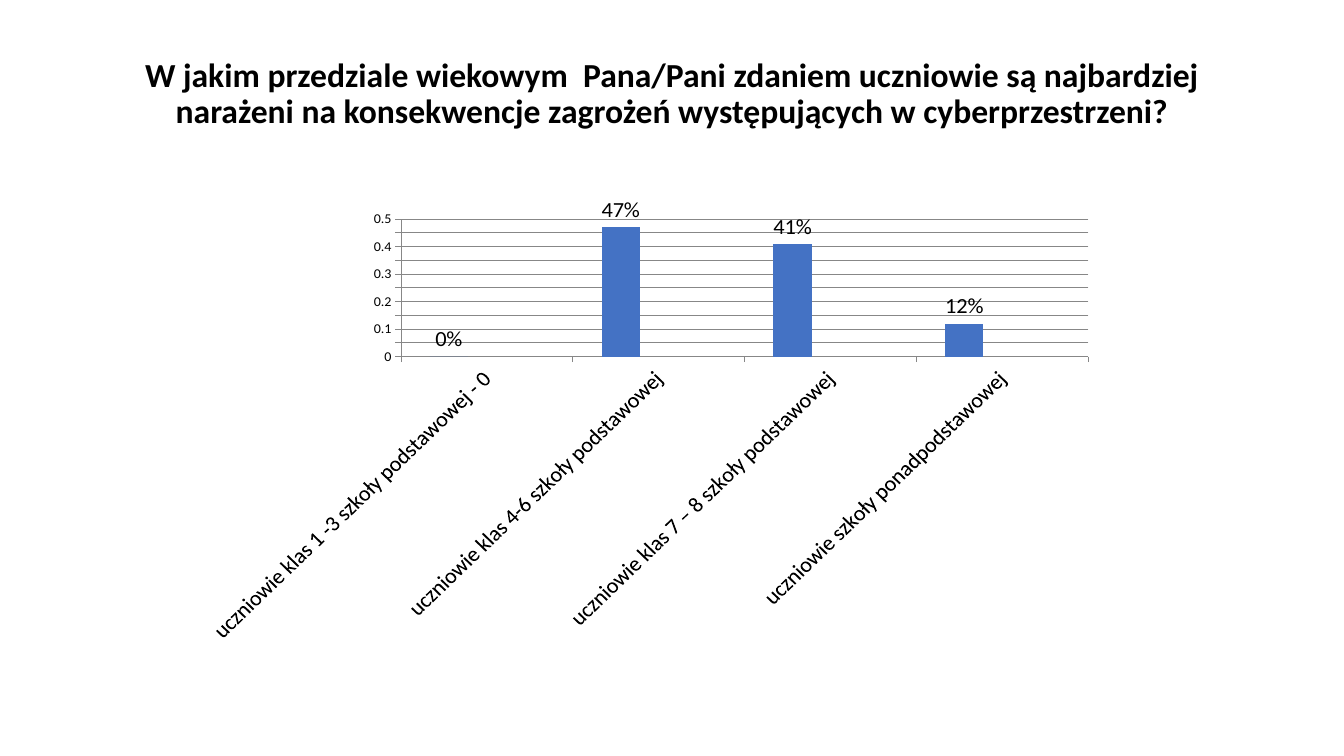
from pptx import Presentation
from pptx.chart.data import CategoryChartData
from pptx.dml.color import RGBColor
from pptx.enum.chart import XL_CHART_TYPE, XL_LABEL_POSITION, XL_TICK_MARK
from pptx.enum.text import MSO_ANCHOR, PP_ALIGN
from pptx.util import Pt

PX = 9525  # 96 px to the inch
FONT = "Calibri"
BLACK = RGBColor(0x00, 0x00, 0x00)
GREY = RGBColor(0x87, 0x87, 0x87)
SERIES_COLORS = [
    RGBColor(0x44, 0x72, 0xC4),
    RGBColor(0xED, 0x7D, 0x31),
    RGBColor(0xA5, 0xA5, 0xA5),
]

QUESTION = (
    "W jakim przedziale wiekowym  Pana/Pani zdaniem uczniowie są najbardziej "
    "narażeni na konsekwencje zagrożeń występujących w cyberprzestrzeni?"
)
ANSWERS = {
    "uczniowie klas 1 -3 szkoły podstawowej - 0": 0,
    "uczniowie klas 4-6 szkoły podstawowej": 0.47,
    "uczniowie klas 7 – 8 szkoły podstawowej": 0.41,
    "uczniowie szkoły ponadpodstawowej": 0.12,
}


def scale(box):
    return [length * PX for length in box]


def style_font(font, size, bold=False):
    font.name = FONT
    font.size = Pt(size)
    font.bold = bold
    font.color.rgb = BLACK


def add_question(page, box):
    frame = page.shapes.add_textbox(*scale(box)).text_frame
    frame.word_wrap = True
    frame.vertical_anchor = MSO_ANCHOR.MIDDLE
    frame.margin_bottom = 40 * PX  # lifts the text above the middle
    frame.text = QUESTION
    para = frame.paragraphs[0]
    para.alignment = PP_ALIGN.CENTER
    para.line_spacing = 0.9
    style_font(para.runs[0].font, 24, bold=True)


def style_axis(axis, size):
    axis.major_tick_mark = XL_TICK_MARK.OUTSIDE
    axis.minor_tick_mark = XL_TICK_MARK.NONE
    axis.format.line.color.rgb = GREY
    style_font(axis.tick_labels.font, size)


def add_answer_chart(page, box):
    # Data: the two empty series keep their room beside each bar
    data = CategoryChartData(number_format="General")
    data.categories = list(ANSWERS)
    data.add_series("Series 1", list(ANSWERS.values()))
    for name in ("Series 2", "Series 3"):
        data.add_series(name, [None] * len(ANSWERS))
    chart = page.shapes.add_chart(
        XL_CHART_TYPE.COLUMN_CLUSTERED, *scale(box), data
    ).chart
    chart.has_legend = False
    chart.has_title = False
    style_font(chart.font, 10)

    # Axes
    style_axis(chart.category_axis, 16)
    for body in chart.category_axis._element.xpath("c:txPr/a:bodyPr"):
        body.set("rot", "-2700000")
    values = chart.value_axis
    style_axis(values, 10)
    values.minimum_scale = 0
    values.maximum_scale = 0.5
    values.major_unit = 0.05
    values.tick_labels.number_format = "General"
    values.tick_labels.number_format_is_linked = False
    values.has_major_gridlines = True
    values.major_gridlines.format.line.color.rgb = GREY

    # Bars and their labels
    plot = chart.plots[0]
    plot.gap_width = 150
    plot.overlap = 0
    plot.vary_by_categories = False
    for series, color in zip(plot.series, SERIES_COLORS):
        series.format.fill.solid()
        series.format.fill.fore_color.rgb = color
    labels = plot.series[0].data_labels
    labels.show_value = True
    labels.number_format = "0%"
    labels.number_format_is_linked = False
    labels.position = XL_LABEL_POSITION.OUTSIDE_END
    style_font(labels.font, 16)


def main():
    deck = Presentation()
    deck.slide_width, deck.slide_height = scale((1280, 720))
    page = deck.slides.add_slide(deck.slide_layouts[6])
    add_question(page, (88, 38, 1104, 139))
    add_answer_chart(page, (180, 188, 874, 425))
    deck.save("out.pptx")


if __name__ == "__main__":
    main()
